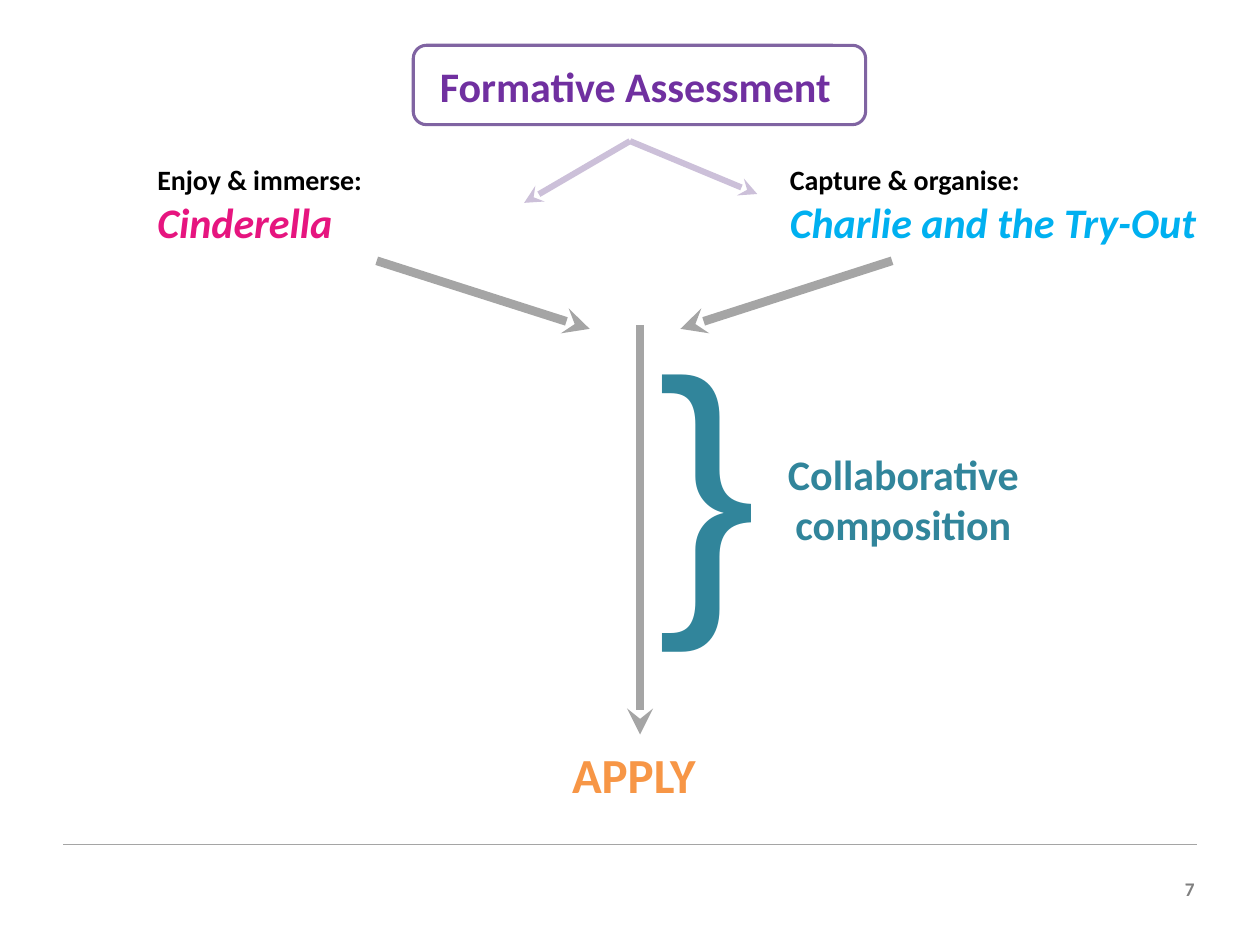
from lxml.etree import SubElement
from pptx import Presentation
from pptx.dml.color import RGBColor
from pptx.enum.shapes import MSO_CONNECTOR, MSO_SHAPE
from pptx.enum.text import MSO_AUTO_SIZE, PP_ALIGN
from pptx.oxml.ns import qn
from pptx.util import Inches, Pt

GREY, LILAC, TEAL = "A5A5A5", "CCC0D9", "31859B"


def color(code):
    return RGBColor.from_string(code)


def write(para, text, size=24, ink="000000", font="Calibri", bold=True, italic=False):
    """Add one formatted run to a paragraph."""
    run = para.add_run()
    run.text = text
    face = run.font
    face.name, face.size, face.bold, face.italic = font, Pt(size), bold, italic
    face.color.rgb = color(ink)


def label(slide, box, text="", align=PP_ALIGN.LEFT, **style):
    """Add a wrapped text box and return its text frame."""
    frame = slide.shapes.add_textbox(*map(Inches, box)).text_frame
    frame.word_wrap = True
    frame.auto_size = MSO_AUTO_SIZE.SHAPE_TO_FIT_TEXT
    para = frame.paragraphs[0]
    para.alignment = align
    if text:
        write(para, text, **style)
    return frame


def line(slide, start, end, ink=GREY, width=5, arrow=True):
    link = slide.shapes.add_connector(
        MSO_CONNECTOR.STRAIGHT, *map(Inches, (*start, *end)))
    link.line.color.rgb = color(ink)
    link.line.width = Pt(width)
    if arrow:
        SubElement(link.line._get_or_add_ln(), qn("a:tailEnd"), type="stealth")
    SubElement(link._element.spPr, qn("a:effectLst"))


def footer(slide, box):
    left, top, width, _ = box
    line(slide, (left, top), (left + width, top), width=0.75, arrow=False)
    label(slide, (9.2, top + 0.21, 0.38, 0.29), "7", PP_ALIGN.RIGHT,
          size=11, ink="7F7F7F")


def heading(slide, box):
    left, top, width, height = box
    frame = slide.shapes.add_shape(
        MSO_SHAPE.ROUNDED_RECTANGLE, *map(Inches, box))
    frame.shadow.inherit = False
    frame.fill.solid()
    frame.fill.fore_color.rgb = color("FFFFFF")
    frame.line.color.rgb = color("8064A2")
    frame.line.width = Pt(1.75)
    label(slide, (left - 1.99, top + 0.07, 7.58, 0.51), "Formative Assessment ",
          PP_ALIGN.CENTER, ink="7030A0")
    # Split towards the two phases
    fork = (5, top + height + 0.13)
    for tip in ((6.01, 1.54), (4.16, 1.61)):
        line(slide, fork, tip, LILAC, 3.5)


def phase(slide, box, title, book, ink, split=False):
    """Phase title with its book, on a second paragraph if split."""
    frame = label(slide, box, title, size=16)
    para = frame.add_paragraph() if split else frame.paragraphs[0]
    write(para, book, ink=ink, italic=True)


def process(slide, box):
    left, top, width, height = box
    center = 5.08
    # Phases join, then lead down to the goal
    line(slide, (left, top), (4.68, top + 0.54))
    line(slide, (left + width, top), (5.4, top + 0.54))
    line(slide, (center, top + 0.51), (center, top + height))
    # Brace and its caption
    label(slide, (5.12, top + 0.21, 0.47, 2.96), "}", size=170, ink=TEAL,
          font="Arial", bold=False)
    label(slide, (5.87, top + 1.44, 2.6, 0.91), "Collaborative composition",
          PP_ALIGN.CENTER, ink=TEAL)
    # Goal
    label(slide, (2.76, top + height + 0.03, 4.63, 0.57), "APPLY ",
          PP_ALIGN.CENTER, size=28, ink="F79646")


def main():
    deck = Presentation()
    deck.slide_width, deck.slide_height = Inches(10), Inches(7.5)
    slide = deck.slides.add_slide(deck.slide_layouts[6])
    footer(slide, (0.5, 6.7, 9, 0.5))
    heading(slide, (3.28, 0.36, 3.59, 0.63))
    phase(slide, (1.15, 1.24, 2.26, 0.77), "Enjoy & immerse: ",
          "Cinderella", "E6157F")
    phase(slide, (6.17, 1.24, 3.71, 0.77), "Capture & organise:",
          "Charlie and the Try-Out", "00B0F0", split=True)
    process(slide, (2.99, 2.07, 4.09, 3.76))
    deck.save("out.pptx")


if __name__ == "__main__":
    main()
